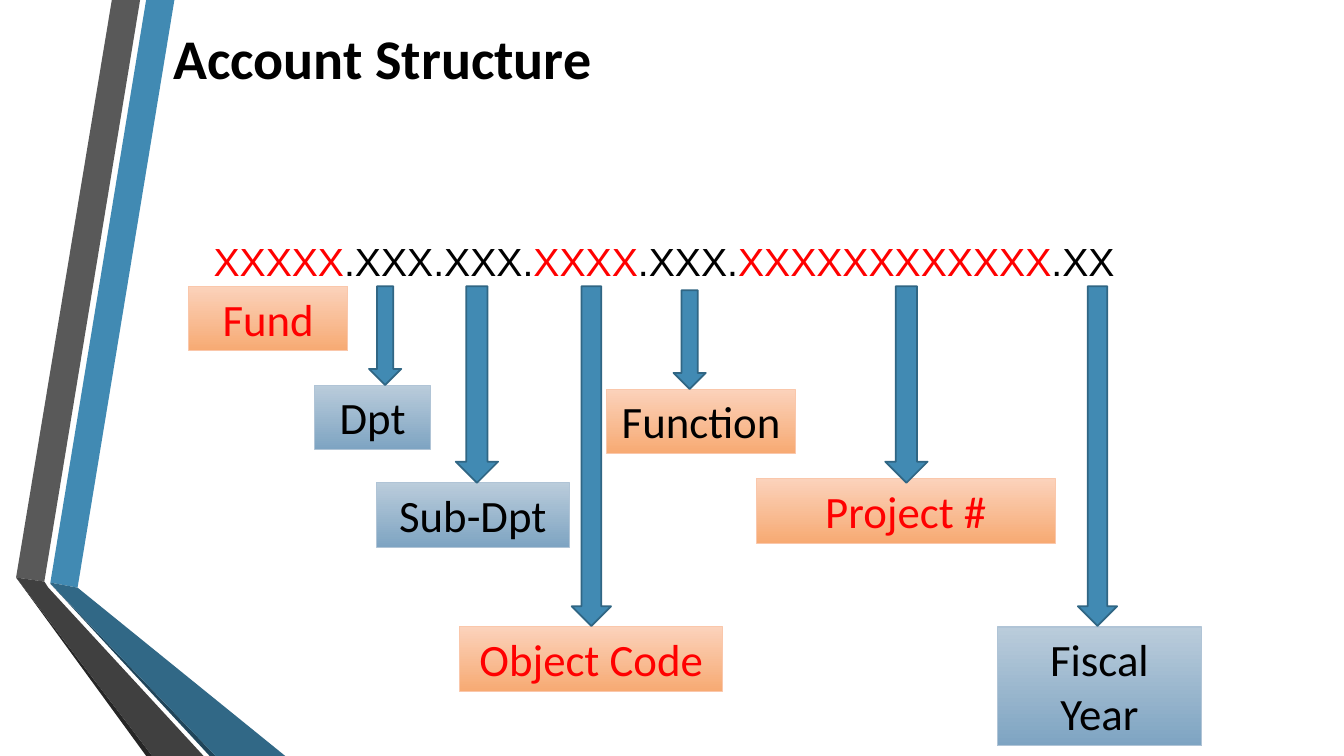
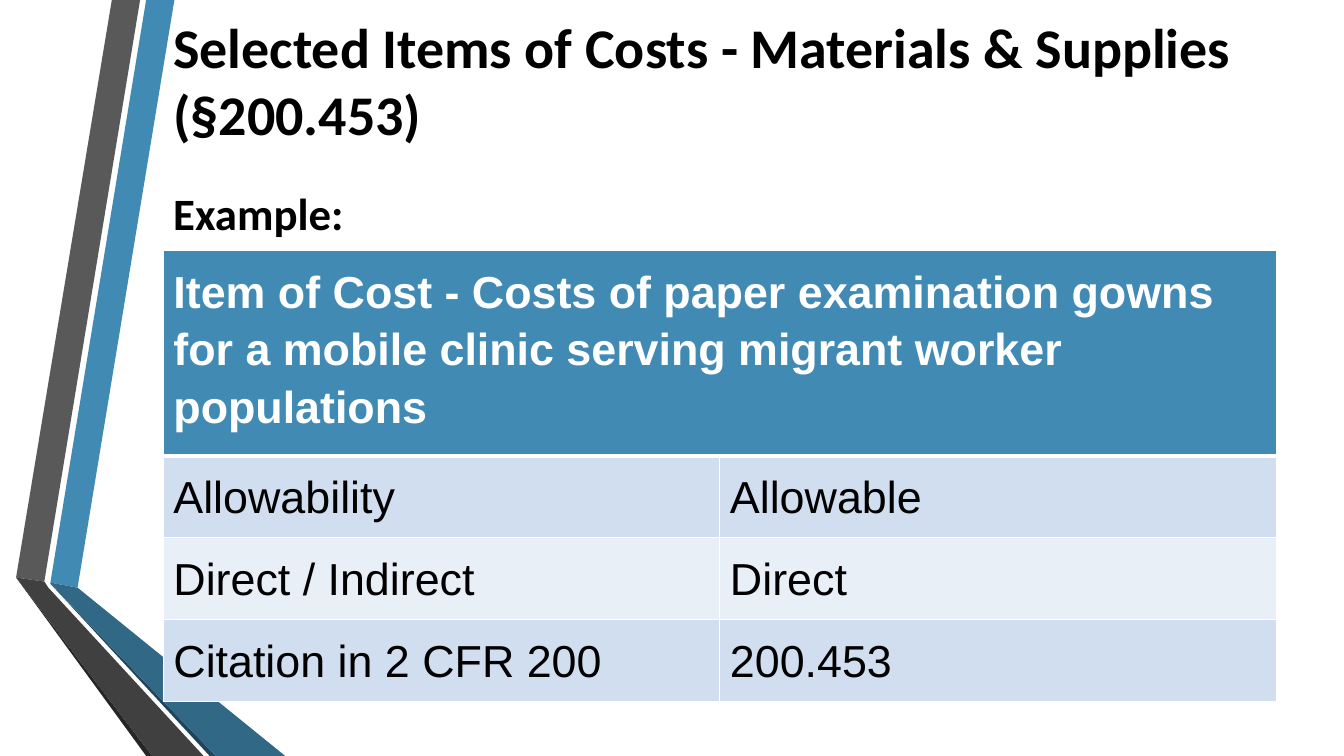
from lxml import etree
from pptx import Presentation
from pptx.dml.color import RGBColor
from pptx.enum import dml, shapes, text
from pptx.oxml import ns
from pptx.util import Inches, Pt

BLUE = RGBColor(0x41, 0x8A, 0xB3)
BLUE_EDGE = RGBColor(0x30, 0x66, 0x84)
BLUE_FOLD = RGBColor(0x31, 0x68, 0x86)
BLUE_SHADE = RGBColor(0x20, 0x45, 0x5A)
GRAY = RGBColor(0x59, 0x59, 0x59)
GRAY_FOLD = RGBColor(0x40, 0x40, 0x40)
GRAY_SHADE = RGBColor(0x26, 0x26, 0x26)
BLACK = RGBColor(0, 0, 0)
WHITE = RGBColor(0xFF, 0xFF, 0xFF)
RED = RGBColor(0xFF, 0, 0)
ROW_DARK = RGBColor(0xD0, 0xDE, 0xEF)
ROW_LIGHT = RGBColor(0xE9, 0xEF, 0xF7)

# Label styles: gradient top, gradient bottom, outline
ORANGE_BOX = (RGBColor(0xFB, 0xD2, 0xBB), RGBColor(0xF7, 0xAA, 0x73),
              RGBColor(0xFA, 0xC7, 0xAB))
BLUE_BOX = (RGBColor(0xBA, 0xCC, 0xDB), RGBColor(0x7E, 0xA4, 0xC2),
            RGBColor(0xB0, 0xC4, 0xD6))

HEAD_FONT, BODY_FONT = "Calibri", "Arial"
LEFT, WIDTH = 1.62, 10.96

# Folded ribbons down the left edge
RIBBONS = [
    (BLUE, [(0.5, 5.78), (0.77, 5.83), (1.73, 0), (1.45, 0)]),
    (GRAY, [(1.39, 0), (1.11, 0), (0.16, 5.73), (0.44, 5.77)]),
    (GRAY_SHADE, [(0.16, 5.73), (1.45, 7.5), (1.51, 7.5)]),
    (BLUE_SHADE, [(0.5, 5.79), (2.08, 7.5), (2.14, 7.5)]),
    (BLUE_FOLD, [(0.5, 5.79), (2.14, 7.5), (2.83, 7.5), (0.77, 5.83), (0.5, 5.78)]),
    (GRAY_FOLD, [(2.02, 7.5), (0.48, 5.83), (0.44, 5.77), (0.16, 5.73), (1.51, 7.5)]),
]

# Account segments: text, colour
SEGMENTS = [("XXXXX", RED), (".XXX.XXX.", BLACK), ("XXXX", RED),
            (".XXX.", BLACK), ("XXXXXXXXXXXX", RED), (".XX", BLACK)]

# Labels: text, box, style, text colour
LABELS = [
    ("Fund", (1.87, 2.84, 1.58, 0.64), ORANGE_BOX, RED),
    ("Dpt", (3.12, 3.82, 1.15, 0.64), BLUE_BOX, BLACK),
    ("Sub-Dpt", (3.73, 4.79, 1.92, 0.64), BLUE_BOX, BLACK),
    ("Object Code", (4.56, 6.22, 2.61, 0.64), ORANGE_BOX, RED),
    ("Function", (6.02, 3.86, 1.87, 0.64), ORANGE_BOX, BLACK),
    ("Project #", (7.5, 4.75, 2.97, 0.64), ORANGE_BOX, RED),
    ("Fiscal Year", (9.89, 6.22, 2.03, 1.18), BLUE_BOX, BLACK),
]

ARROWS = [(4.52, 2.84, 0.42, 1.95), (5.67, 2.84, 0.39, 3.37),
          (3.66, 2.84, 0.32, 0.98), (6.68, 2.88, 0.32, 0.98),
          (8.78, 2.84, 0.42, 1.95), (10.69, 2.84, 0.39, 3.37)]

COST_ITEM = ("Item of Cost - Costs of paper examination gowns for a mobile "
             "clinic serving migrant worker populations")
COST_ROWS = [("Allowability", "Allowable"), ("Direct / Indirect", "Direct"),
             ("Citation in 2 CFR 200", "200.453")]


def inches(box):
    return [Inches(v) for v in box]


def style_run(r, size, color, font=HEAD_FONT, bold=False):
    r.font.size = Pt(size)
    r.font.name = font
    r.font.bold = bold
    r.font.color.rgb = color


def add_ribbons(slide):
    group = slide.shapes.add_group_shape()
    for color, points in RIBBONS:
        pts = [inches(pt) for pt in points]
        builder = group.shapes.build_freeform(*pts[0])
        builder.add_line_segments(pts[1:], close=True)
        sp = builder.convert_to_shape()
        sp.shadow.inherit = False
        sp.fill.solid()
        sp.fill.fore_color.rgb = color
        sp.line.fill.background()


def new_slide(prs, title, top):
    """Title-only slide with the ribbons and a bold heading."""
    slide = prs.slides.add_slide(prs.slide_layouts[5])
    add_ribbons(slide)
    sp = slide.shapes.title
    sp.left, sp.top, sp.width, sp.height = inches((LEFT, top, WIDTH, 1.92))
    tf = sp.text_frame
    tf.text = title
    tf.word_wrap = True
    tf.auto_size = text.MSO_AUTO_SIZE.NONE
    tf.vertical_anchor = text.MSO_ANCHOR.MIDDLE
    p = tf.paragraphs[0]
    p.alignment = text.PP_ALIGN.LEFT
    style_run(p.runs[0], 40, BLACK, bold=True)
    return slide


def add_label(slide, label, box, style, color):
    top_color, bottom_color, edge = style
    sp = slide.shapes.add_shape(shapes.MSO_SHAPE.RECTANGLE, *inches(box))
    sp.shadow.inherit = False
    sp.fill.gradient()
    sp.fill.gradient_angle = 270
    for stop, stop_color in zip(sp.fill.gradient_stops, (top_color, bottom_color)):
        stop.color.rgb = stop_color
    sp.line.color.rgb = edge
    sp.line.width = Pt(0.75)
    tf = sp.text_frame
    tf.text = label
    tf.word_wrap = True
    tf.vertical_anchor = text.MSO_ANCHOR.TOP
    p = tf.paragraphs[0]
    p.alignment = text.PP_ALIGN.CENTER
    style_run(p.runs[0], 32, color)


def add_arrow(slide, box):
    sp = slide.shapes.add_shape(shapes.MSO_SHAPE.DOWN_ARROW, *inches(box))
    sp.shadow.inherit = False
    sp.fill.solid()
    sp.fill.fore_color.rgb = BLUE
    sp.line.color.rgb = BLUE_EDGE
    sp.line.width = Pt(1.25)


def add_account_number(slide, box):
    tf = slide.shapes.add_textbox(*inches(box)).text_frame
    tf.word_wrap = True
    for segment, color in SEGMENTS:
        r = tf.paragraphs[0].add_run()
        r.text = segment
        style_run(r, 28, color, BODY_FONT)


def add_subheading(slide, label, box):
    tf = slide.shapes.add_textbox(*inches(box)).text_frame
    tf.word_wrap = True
    tf.margin_top = tf.margin_bottom = Inches(0.1)
    tf.text = label
    p = tf.paragraphs[0]
    p.space_after = Pt(6)
    style_run(p.runs[0], 32, BLACK, bold=True)


def set_borders(cell, bottom):
    """White cell borders; they must come before the fill."""
    tc_pr = cell._tc.get_or_add_tcPr()
    widths = {"a:lnL": 1, "a:lnR": 1, "a:lnT": 1, "a:lnB": bottom}
    for i, (tag, width) in enumerate(widths.items()):
        ln = etree.Element(ns.qn(tag), w=str(Pt(width)))
        fill = etree.SubElement(ln, ns.qn("a:solidFill"))
        etree.SubElement(fill, ns.qn("a:srgbClr"), val=str(WHITE))
        tc_pr.insert(i, ln)


def fill_cell(cell, label, fill, color, header=False):
    cell.fill.solid()
    cell.fill.fore_color.rgb = fill
    set_borders(cell, 3 if header else 1)
    cell.margin_left = cell.margin_right = Inches(0.1)
    cell.margin_top = cell.margin_bottom = Inches(0.1)
    cell.text = label
    p = cell.text_frame.paragraphs[0]
    p.line_spacing = 1.15
    for r in p.runs:
        style_run(r, 32, color, BODY_FONT, header)


def add_cost_table(slide, box):
    table = slide.shapes.add_table(len(COST_ROWS) + 1, 2, *inches(box)).table
    table.rows[0].height = Inches(1.9)
    table.cell(0, 0).merge(table.cell(0, 1))
    fill_cell(table.cell(0, 0), COST_ITEM, BLUE, WHITE, header=True)
    fill_cell(table.cell(0, 1), "", BLUE, WHITE, header=True)
    for i, row in enumerate(COST_ROWS, 1):
        table.rows[i].height = Inches(0.77)
        for j, label in enumerate(row):
            fill_cell(table.cell(i, j), label, ROW_DARK if i % 2 else ROW_LIGHT, BLACK)


def account_slide(prs):
    slide = new_slide(prs, "Account Structure", -0.39)
    for label in LABELS:
        add_label(slide, *label)
    for box in ARROWS:
        add_arrow(slide, box)
    add_account_number(slide, (2.02, 2.31, 9.33, 0.57))


def cost_slide(prs):
    slide = new_slide(
        prs, "Selected Items of Costs - Materials & Supplies (§200.453)", -0.17)
    add_subheading(slide, "Example:", (LEFT, 1.74, WIDTH, 0.74))
    add_cost_table(slide, (LEFT, 2.48, 11.04, 4.21))


def main():
    prs = Presentation()
    prs.slide_width, prs.slide_height = Inches(13.33), Inches(7.5)
    account_slide(prs)
    cost_slide(prs)
    prs.save("out.pptx")


if __name__ == "__main__":
    main()
